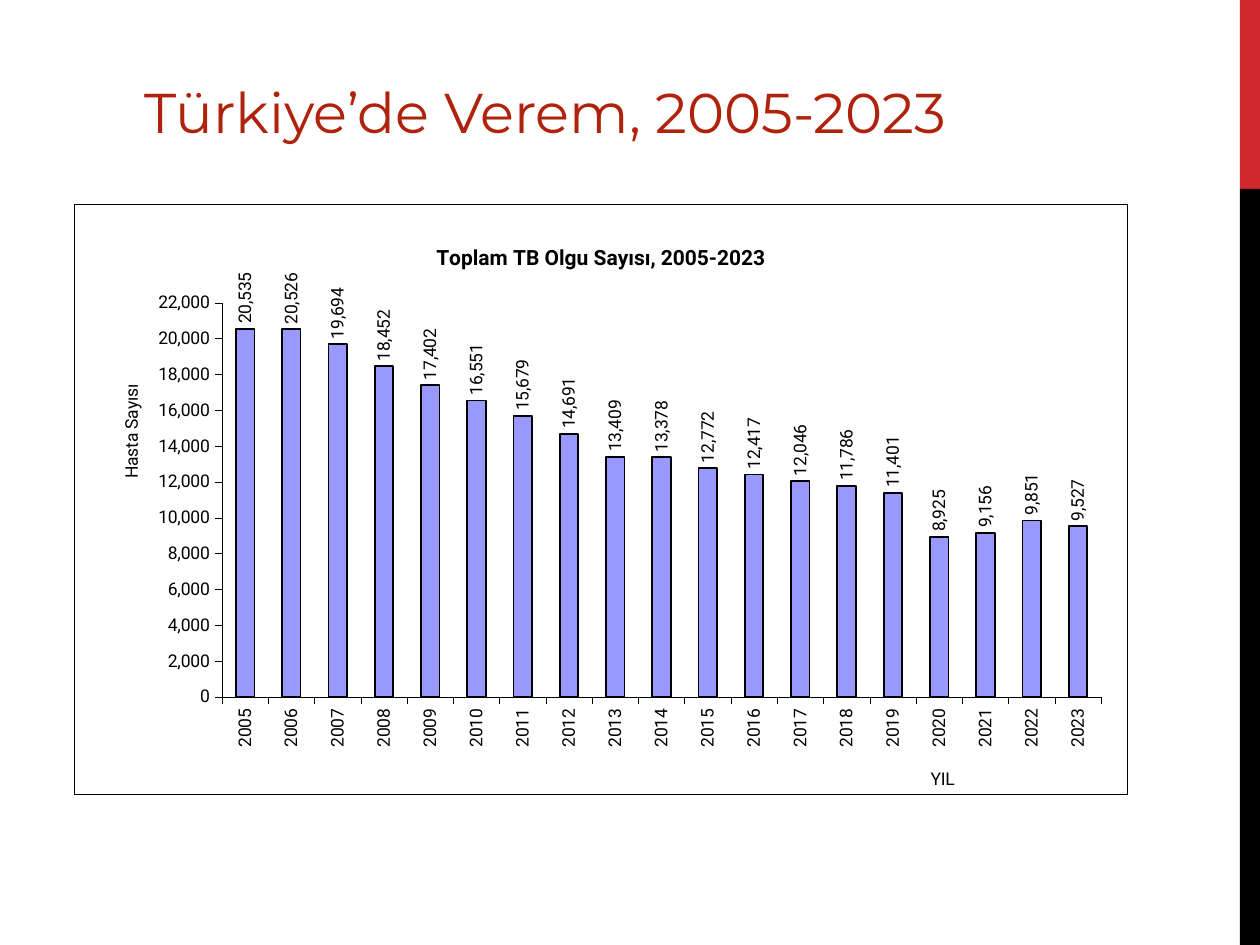
from lxml.etree import SubElement
from pptx import Presentation
from pptx.chart.data import CategoryChartData
from pptx.dml.color import RGBColor
from pptx.enum.chart import XL_CHART_TYPE, XL_LABEL_POSITION, XL_TICK_MARK
from pptx.enum.shapes import MSO_SHAPE
from pptx.enum.text import MSO_ANCHOR, PP_ALIGN
from pptx.oxml.ns import qn
from pptx.util import Inches, Pt

W, H = 10, 7.5
BAND_W, BAND_SPLIT = 0.16, 0.2  # side band: width, share of height in red
CASES = [20535, 20526, 19694, 18452, 17402, 16551, 15679, 14691, 13409, 13378,
         12772, 12417, 12046, 11786, 11401, 8925, 9156, 9851, 9527]
FIRST_YEAR = 2005


def rgb(hex_color):
    return RGBColor.from_string(hex_color)


def set_fill(fill, color):
    fill.solid()
    fill.fore_color.rgb = rgb(color)


def set_line(line, color, width):
    set_fill(line.fill, color)
    line.width = Pt(width)


def set_font(font, name, size, color, bold=False):
    font.name, font.size, font.bold = name, Pt(size), bold
    font.color.rgb = rgb(color)


def add_band(s, top, height, color):
    band = s.shapes.add_shape(MSO_SHAPE.RECTANGLE, Inches(W - BAND_W), Inches(top),
                              Inches(BAND_W), Inches(height))
    band.shadow.inherit = False
    set_fill(band.fill, color)
    band.line.fill.background()


def set_title(s, text):
    title = s.shapes.title
    title.left, title.top = Inches(0.67), Inches(0.56)
    title.width, title.height = Inches(7.32), Inches(0.64)
    tf = title.text_frame
    tf.word_wrap = True
    tf.vertical_anchor = MSO_ANCHOR.MIDDLE
    p = tf.paragraphs[0]
    p.alignment = PP_ALIGN.CENTER
    r = p.add_run()
    r.text = text
    set_font(r.font, "Montserrat", 32, "AF220B")


def set_layout(parent, **values):
    """Place a chart part by shares of the chart's size."""
    layout = parent.find(qn("c:layout"))
    if layout is None:
        layout = parent.makeelement(qn("c:layout"), {})
        parent.insert(0, layout)
    manual = SubElement(layout, qn("c:manualLayout"))
    for tag, value in values.items():
        SubElement(manual, qn(f"c:{tag}")).set("val", str(value))


def set_chart_title(title, text, x, y, size=10, bold=False):
    r = title.text_frame.paragraphs[0].add_run()
    r.text = text
    set_font(r.font, "Roboto", size, "000000", bold)
    set_layout(title._element, xMode="edge", yMode="edge", x=x, y=y)


def turn_upright(text_props):
    text_props.find(qn("a:bodyPr")).set("rot", "-5400000")
    text_props.find(qn("a:bodyPr")).set("vert", "horz")


def style_axis(axis):
    axis.major_tick_mark = XL_TICK_MARK.OUTSIDE
    axis.minor_tick_mark = XL_TICK_MARK.NONE
    set_line(axis.format.line, "000000", 0.25)
    set_font(axis.tick_labels.font, "Roboto", 10, "000000")


def style_area(element, line=None):
    """Give the chart or plot area a white fill and an optional border."""
    props = element.makeelement(qn("c:spPr"), {})
    fill = SubElement(props, qn("a:solidFill"))
    SubElement(fill, qn("a:srgbClr")).set("val", "FFFFFF")
    border = SubElement(props, qn("a:ln"))
    if line:
        border.set("w", str(Pt(0.25)))
        fill = SubElement(border, qn("a:solidFill"))
        SubElement(fill, qn("a:srgbClr")).set("val", line)
    else:
        SubElement(border, qn("a:noFill"))
    return props


def add_case_chart(s):
    data = CategoryChartData(number_format="#,##0")
    data.categories = [str(FIRST_YEAR + i) for i in range(len(CASES))]
    data.add_series("Series 1", CASES)
    chart = s.shapes.add_chart(XL_CHART_TYPE.COLUMN_CLUSTERED, Inches(0.59), Inches(1.62),
                               Inches(8.36), Inches(4.69), data).chart
    set_font(chart.font, "Roboto", 10, "000000")
    chart.has_legend = False
    chart.has_title = True
    set_chart_title(chart.chart_title, "Toplam TB Olgu Sayısı, 2005-2023", 0.34, 0.06, 12, True)

    # Axes
    years, cases = chart.category_axis, chart.value_axis
    for axis in (years, cases):
        style_axis(axis)
    set_chart_title(years.axis_title, "YIL", 0.81, 0.95)
    set_chart_title(cases.axis_title, "Hasta Sayısı", 0.04, 0.3)
    turn_upright(cases.axis_title.text_frame._txBody)
    turn_upright(years._element.find(qn("c:txPr")))
    cases.minimum_scale, cases.maximum_scale, cases.major_unit = 0, 22000, 2000
    cases.tick_labels.number_format = "#,##0"
    cases.tick_labels.number_format_is_linked = False
    set_line(cases.major_gridlines.format.line, "FFFFFF", 0.25)

    # Columns and their labels
    plot = chart.plots[0]
    plot.gap_width, plot.vary_by_categories = 150, False
    series = plot.series[0]
    set_fill(series.format.fill, "9999FF")
    set_line(series.format.line, "000000", 1)
    labels = series.data_labels
    labels.show_value = True
    labels.position = XL_LABEL_POSITION.OUTSIDE_END
    labels.number_format, labels.number_format_is_linked = "#,##0", False
    set_font(labels.font, "Roboto", 10, "000000")
    turn_upright(labels._element.find(qn("c:txPr")))

    # Plot area and chart frame
    space = chart._chartSpace
    plot_area = space.chart.plotArea
    set_layout(plot_area, layoutTarget="inner", xMode="edge", yMode="edge",
               x=0.14, y=0.167, w=0.835, h=0.668)
    plot_area.append(style_area(plot_area))
    space.chart.addnext(style_area(space, "000000"))


def main():
    prs = Presentation()
    prs.slide_width, prs.slide_height = Inches(W), Inches(H)
    s = prs.slides.add_slide(prs.slide_layouts[5])
    # Side band
    split = H * BAND_SPLIT
    add_band(s, 0, split, "D1282E")
    add_band(s, split, H - split, "000000")
    # Content
    set_title(s, "Türkiye’de Verem, 2005-2023")
    add_case_chart(s)
    prs.save("out.pptx")


if __name__ == "__main__":
    main()
